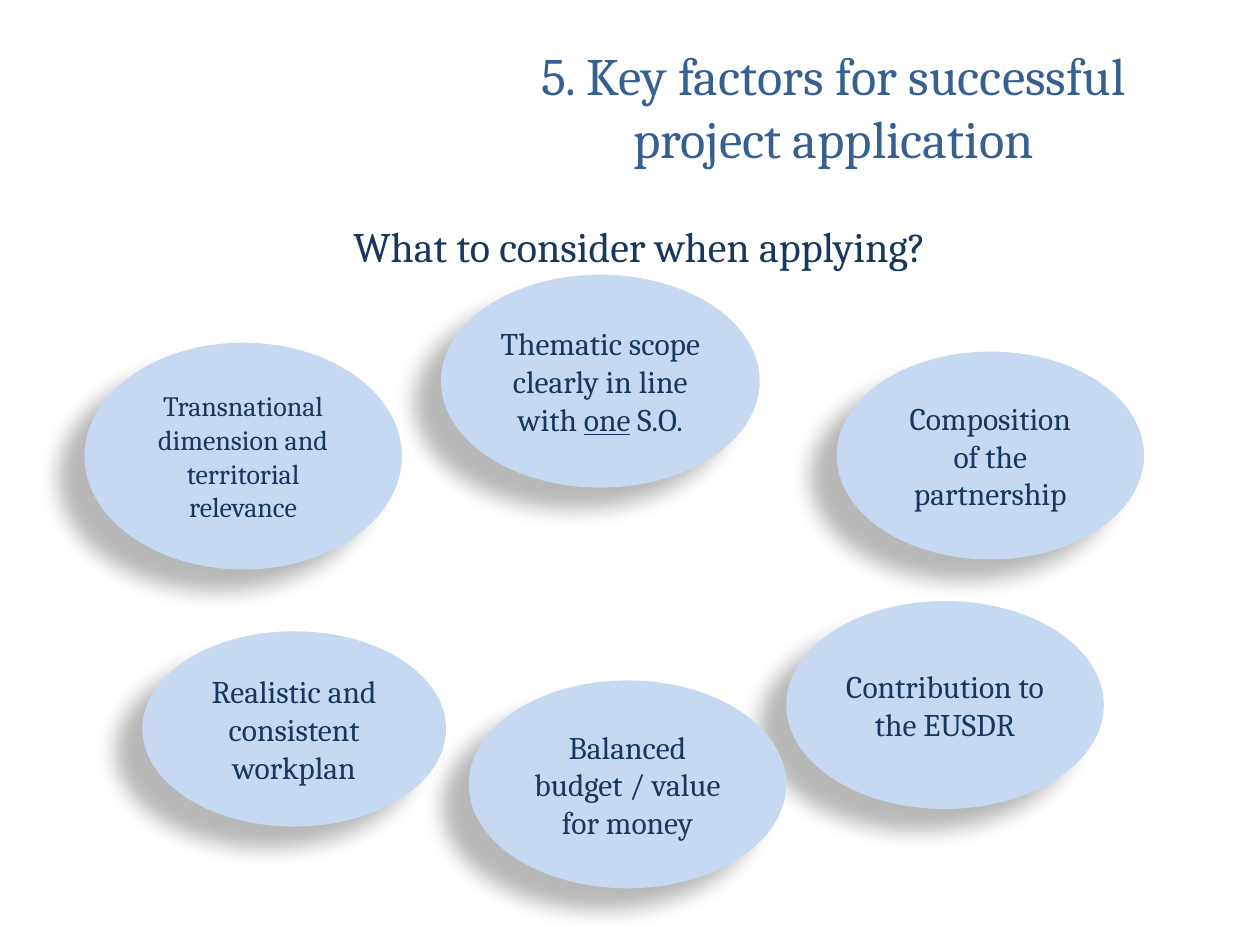
from dataclasses import dataclass

from lxml.etree import SubElement
from pptx import Presentation
from pptx.dml.color import RGBColor
from pptx.enum.shapes import MSO_SHAPE
from pptx.enum.text import MSO_ANCHOR, PP_ALIGN
from pptx.oxml.ns import qn
from pptx.util import Inches, Pt


@dataclass(frozen=True)
class Theme:
    font: str = "Cambria"
    heading: RGBColor = RGBColor(0x37, 0x60, 0x92)
    ink: RGBColor = RGBColor(0x17, 0x37, 0x5E)
    bubble: RGBColor = RGBColor(0xC6, 0xD9, 0xF1)
    shadow: str = "000000"
    title_size: int = 30
    question_size: int = 24
    factor_size: int = 18
    small_factor_size: int = 16


THEME = Theme()

FACTORS = [
    ((0.67, 2.72, 2.52, 1.8), ["Transnational dimension and territorial relevance"],
     THEME.small_factor_size),
    ((3.5, 2.18, 2.53, 1.69), ["Thematic scope clearly in line with ", "one", " S.O."],
     THEME.factor_size),
    ((1.13, 5.01, 2.41, 1.55), ["Realistic and consistent workplan"], THEME.factor_size),
    ((6.24, 4.77, 2.52, 1.65), ["Contribution to the EUSDR"], THEME.factor_size),
    ((6.64, 2.79, 2.44, 1.65), ["Composition of the partnership"], THEME.factor_size),
    ((3.72, 5.4, 2.52, 1.65), ["Balanced budget / value for money"], THEME.factor_size),
]


def style_paragraph(paragraph, size, color):
    paragraph.alignment = PP_ALIGN.CENTER
    paragraph.space_before = Pt(0)
    paragraph.font.name = THEME.font
    paragraph.font.size = Pt(size)
    paragraph.font.color.rgb = color


def fill_placeholder(placeholder, box, text, size, color, anchor):
    placeholder.left, placeholder.top, placeholder.width, placeholder.height = map(Inches, box)
    frame = placeholder.text_frame
    frame.text = text
    frame.vertical_anchor = anchor
    style_paragraph(frame.paragraphs[0], size, color)


def add_soft_shadow(shape):
    shape.shadow.inherit = False
    effects = shape._element.spPr.find(qn("a:effectLst"))
    outer = SubElement(effects, qn("a:outerShdw"), blurRad=str(Pt(11.8)),
                       dist=str(Pt(19.7)), dir=str(141 * 60000),
                       algn="ctr", rotWithShape="0")
    tint = SubElement(outer, qn("a:srgbClr"), val=THEME.shadow)
    SubElement(tint, qn("a:alpha"), val="28000")


def add_factor(slide, box, phrases, size):
    bubble = slide.shapes.add_shape(MSO_SHAPE.OVAL, *map(Inches, box))
    bubble.fill.solid()
    bubble.fill.fore_color.rgb = THEME.bubble
    bubble.line.fill.background()
    add_soft_shadow(bubble)
    frame = bubble.text_frame
    frame.word_wrap = True
    frame.vertical_anchor = MSO_ANCHOR.MIDDLE
    paragraph = frame.paragraphs[0]
    for phrase in phrases:
        run = paragraph.add_run()
        run.text = phrase
        if phrase == "one":
            run.font.underline = True
    style_paragraph(paragraph, size, THEME.ink)


def main():
    deck = Presentation()
    deck.slide_width, deck.slide_height = Inches(10), Inches(7.5)
    slide = deck.slides.add_slide(deck.slide_layouts[0])
    fill_placeholder(slide.shapes.title, (3.74, 0.29, 5.75, 1.1),
                     "5. Key factors for successful project application",
                     THEME.title_size, THEME.heading, MSO_ANCHOR.MIDDLE)
    fill_placeholder(slide.placeholders[1], (0.51, 1.7, 9.13, 5.2),
                     "What to consider when applying?",
                     THEME.question_size, THEME.ink, MSO_ANCHOR.TOP)
    for box, phrases, size in FACTORS:
        add_factor(slide, box, phrases, size)
    deck.save("out.pptx")


if __name__ == "__main__":
    main()
